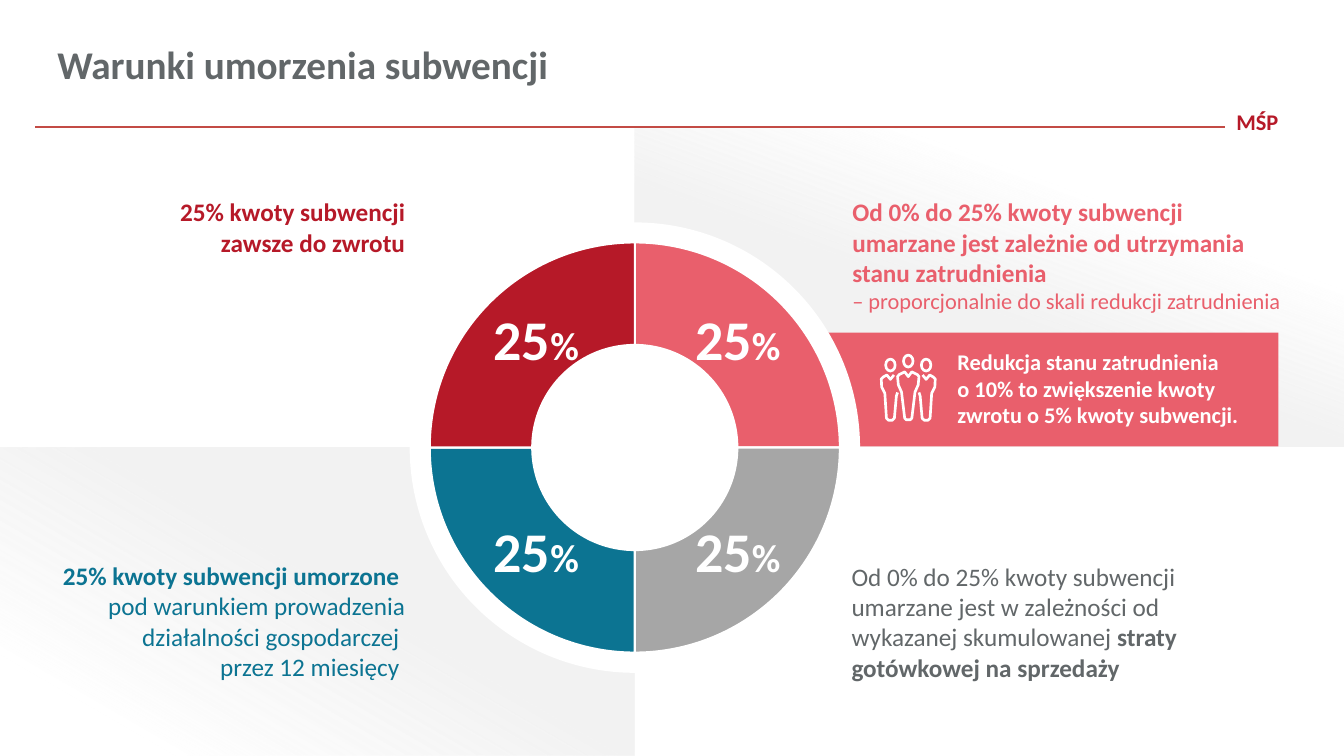
import lxml.etree
import pptx
import pptx.chart.data
import pptx.dml.color
import pptx.enum.chart
import pptx.enum.shapes
import pptx.enum.text
import pptx.oxml.ns
import pptx.util

Cm = pptx.util.Cm
Shapes = pptx.enum.shapes.MSO_SHAPE
Align = pptx.enum.text.PP_ALIGN
RED, PINK, BLUE, GREY = "B61928", "E95F6C", "0C7492", "626769"
WHITE, PANEL = "FFFFFF", "F2F2F2"
CENTRE_X, CENTRE_Y = 16, 11.28
BREAK = "\n"


def colour(value):
    return pptx.dml.color.RGBColor.from_string(value)


def add_child(parent, tag, **attributes):
    return lxml.etree.SubElement(parent, pptx.oxml.ns.qn(tag), attributes)


def set_alpha(shape, percents):
    colours = shape._element.spPr.iter(pptx.oxml.ns.qn("a:srgbClr"))
    for element, percent in zip(colours, percents):
        add_child(element, "a:alpha", val=str(percent * 1000))


def centred(diameter):
    return CENTRE_X - diameter / 2, CENTRE_Y - diameter / 2, diameter, diameter


def add_shape(slide, kind, box, fill):
    shape = slide.shapes.add_shape(kind, *map(Cm, box))
    shape.shadow.inherit = False
    shape.line.fill.background()
    shape.fill.solid()
    shape.fill.fore_color.rgb = colour(fill)
    return shape


def write_text(shape, paragraphs, font_format, align=Align.LEFT, wrap=True):
    """Each paragraph is a list of (text, changed format) runs."""
    frame = shape.text_frame
    frame.word_wrap = wrap
    frame.auto_size = pptx.enum.text.MSO_AUTO_SIZE.SHAPE_TO_FIT_TEXT
    frame.vertical_anchor = pptx.enum.text.MSO_ANCHOR.TOP
    for index, runs in enumerate(paragraphs):
        paragraph = frame.add_paragraph() if index else frame.paragraphs[0]
        paragraph.alignment = align
        for text, changes in runs:
            if text == BREAK:
                paragraph.add_line_break()
                continue
            run = paragraph.add_run()
            run.text = text
            values = {"name": "Calibri", "bold": False, **font_format, **changes}
            run.font.color.rgb = colour(values.pop("color"))
            run.font.size = pptx.util.Pt(values.pop("size"))
            for name, value in values.items():
                setattr(run.font, name, value)


def add_text(slide, box, *text, **options):
    write_text(slide.shapes.add_textbox(*map(Cm, box)), *text, **options)


def add_header(slide, box):
    left, top, width, height = box
    # Title
    title = slide.shapes.title
    position = {"left": left + 0.3, "top": top, "width": 13.03, "height": 1.45}
    for name, value in position.items():
        setattr(title, name, Cm(value))
    write_text(title, [[("Warunki umorzenia subwencji", {})]],
               {"size": 28, "color": GREY, "bold": True}, wrap=False)
    # Rule and tag
    rule = slide.shapes.add_connector(
        pptx.enum.shapes.MSO_CONNECTOR.STRAIGHT,
        Cm(left), Cm(top + height), Cm(left + width), Cm(top + height))
    rule.line.color.rgb = colour("C34B45")
    rule.line.width = pptx.util.Pt(2)
    add_child(rule._element.spPr, "a:effectLst")
    add_text(slide, (left + width + 0.05, top + 1.7, 1.8, 0.94),
             [[("MŚP", {})]], {"size": 16, "color": RED, "bold": True})


def add_panel(slide, box, fade_end, angle, rotation=0):
    panel = add_shape(slide, Shapes.RECTANGLE, box, PANEL)
    panel.rotation = rotation
    panel.fill.gradient()
    panel.fill.gradient_angle = 360 - angle
    for stop, position in zip(panel.fill.gradient_stops, (0.45, fade_end)):
        stop.color.rgb = colour(PANEL)
        stop.position = position
    set_alpha(panel, (100, 0))


def add_people(slide, box):
    left, top, width, _ = box
    half = [(0.09, 0.45), (0.23, 0.52), (0.27, 0.57), (0.25, 0.78),
            (0.17, 0.96), (0.09, 1.62), (0.05, 1.66)]
    front = [(0, 0.57)] + half + [(-x, y) for x, y in reversed(half)]
    side = [(-0.09, 0.53), (0, 0.64), (0.09, 0.53), (0.18, 0.58), (0.23, 0.63),
            (0.22, 0.83), (0.14, 0.99), (0.1, 1.62), (0.05, 1.67),
            (-0.05, 1.67), (-0.1, 1.62), (-0.15, 1.06), (-0.18, 0.97)]
    people = [(-0.45, 0.13, side, -1, False), (0.45, 0.13, side, 1, False),
              (0, 0.03, front, 1, True)]
    for offset, head_top, outline, direction, closed in people:
        middle = left + width / 2 + offset
        head = add_shape(slide, Shapes.OVAL,
                         (middle - 0.12, top + head_top, 0.24, 0.3), WHITE)
        points = [(Cm(middle + direction * x), Cm(top + y)) for x, y in outline]
        builder = slide.shapes.build_freeform(*points[0])
        builder.add_line_segments(points[1:], close=closed)
        body = builder.convert_to_shape()
        body.shadow.inherit = False
        for part in (head, body):
            part.fill.background()
            part.line.color.rgb = colour(WHITE)
            part.line.width = pptx.util.Pt(1.9)


def add_callout(slide, box):
    left, top, _, _ = box
    add_shape(slide, Shapes.RECTANGLE, box, PINK)
    add_people(slide, (left + 1.73, top + 0.54, 1.48, 1.7))
    add_text(slide, (left + 3.46, top + 0.26, 7.95, 2.31),
             [[("Redukcja stanu zatrudnienia ", {}), (BREAK, {}),
               ("o 10% to zwiększenie kwoty zwrotu o 5% kwoty subwencji.", {})]],
             {"size": 16, "color": WHITE, "bold": True})


def add_ring(slide, box):
    # Doughnut chart on a white disc
    add_shape(slide, Shapes.OVAL, centred(11.35), WHITE)
    data = pptx.chart.data.CategoryChartData()
    data.categories = ["1", "2", "3", "4"]
    data.add_series("Series 1", [25] * 4)
    chart = slide.shapes.add_chart(
        pptx.enum.chart.XL_CHART_TYPE.DOUGHNUT, *map(Cm, box), data).chart
    chart.has_legend = chart.has_title = False
    chart.font.name = "Calibri"
    chart.font.size = pptx.util.Pt(10)
    chart.font.color.rgb = colour("000000")
    plot = chart.plots[0]
    plot.vary_by_categories = True
    for index, fill in enumerate((PINK, "A6A6A6", BLUE, RED)):
        point_format = plot.series[0].points[index].format
        point_format.fill.solid()
        point_format.fill.fore_color.rgb = colour(fill)
        point_format.line.color.rgb = colour(WHITE)
        point_format.line.width = pptx.util.Pt(1.5)
    # Hole size and plot position
    area = chart._chartSpace.chart.plotArea
    next(area.iter(pptx.oxml.ns.qn("c:holeSize"))).set("val", "44")
    for old in area.findall(pptx.oxml.ns.qn("c:layout")):
        area.remove(old)
    layout = add_child(area, "c:layout")
    area.insert(0, layout)
    manual = add_child(layout, "c:manualLayout")
    for name, value in {"layoutTarget": "inner", "xMode": "edge", "yMode": "edge",
                        "x": "0.033", "y": "0.033", "w": "0.934", "h": "0.934"}.items():
        add_child(manual, "c:" + name, val=value)
    # Translucent inner rim
    rim = add_shape(slide, Shapes.DONUT, centred(5.11), WHITE)
    rim.adjustments[0] = 0.066
    set_alpha(rim, (27,))
    # Percentages
    for y in (7.54, 12.9):
        for x in (12.19, 17.27):
            add_text(slide, (x, y, 2.69, 1.96), [[("25", {}), ("%", {"size": 28})]],
                     {"size": 40, "color": WHITE, "bold": True}, wrap=False)


def add_conditions(slide):
    bold = {"bold": True}
    add_text(slide, (2.54, 4.83, 7.92, 1.8),
             [[("25% kwoty subwencji zawsze do zwrotu", bold)]],
             {"size": 18, "color": RED}, align=Align.RIGHT)
    add_text(slide, (0.89, 14, 9.57, 3.33),
             [[("25% kwoty subwencji umorzone ", bold)],
              [("pod warunkiem prowadzenia działalności gospodarczej ", {})],
              [("przez 12 miesięcy ", {})]],
             {"size": 18, "color": BLUE}, align=Align.RIGHT)
    add_text(slide, (21.21, 14.02, 10.64, 3.33),
             [[("Od 0% do 25% kwoty subwencji umarzane jest w zależności od "
                "wykazanej skumulowanej ", {}),
               ("straty gotówkowej na sprzedaży", bold)]],
             {"size": 18, "color": GREY})
    add_text(slide, (21.23, 4.83, 11.4, 3.25),
             [[("Od 0% do 25% kwoty subwencji umarzane jest zależnie od "
                "utrzymania stanu zatrudnienia ", bold), (BREAK, {}),
               ("– proporcjonalnie do skali redukcji zatrudnienia", {"size": 16})]],
             {"size": 18, "color": PINK})


def main():
    presentation = pptx.Presentation()
    presentation.slide_width, presentation.slide_height = Cm(33.87), Cm(19.05)
    slide = presentation.slides.add_slide(presentation.slide_layouts[5])
    add_header(slide, (0.89, 0.89, 29.97, 2.31))
    add_panel(slide, (CENTRE_X, 3.25, 17.87, 8), 0.72, 110, rotation=180)
    add_panel(slide, (0, CENTRE_Y, CENTRE_X, 7.77), 0.85, 120)
    add_conditions(slide)
    add_callout(slide, (20.42, 8.38, 11.8, 2.87))
    add_ring(slide, centred(11.07))
    presentation.save("out.pptx")


if __name__ == "__main__":
    main()
